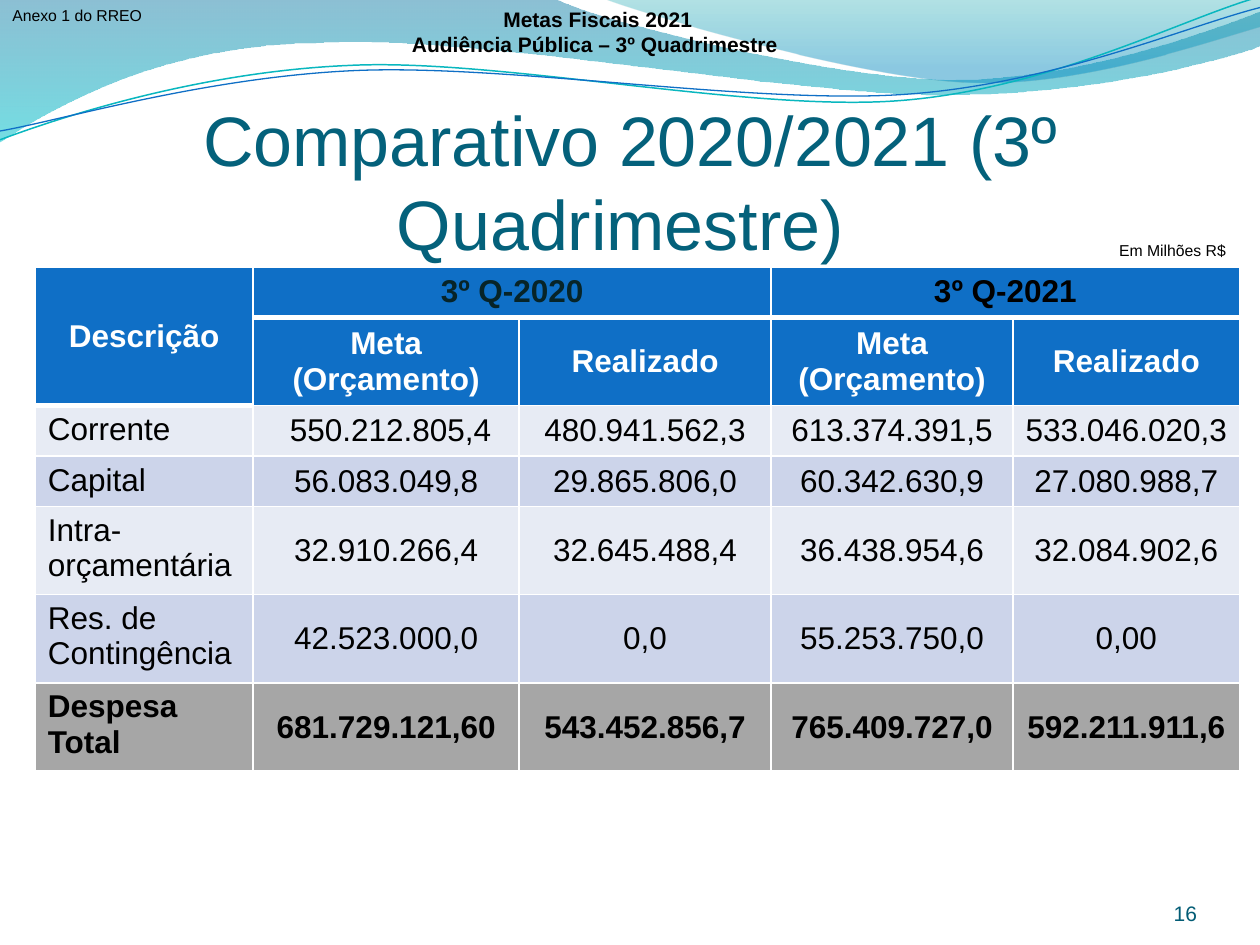
from lxml.etree import SubElement
from pptx import Presentation
from pptx.dml.color import RGBColor as RGB
from pptx.enum.text import MSO_ANCHOR as Anchor, MSO_AUTO_SIZE as Fit, PP_ALIGN as Align
from pptx.oxml import parse_xml
from pptx.oxml.ns import nsdecls, qn
from pptx.util import Inches, Pt

BLACK, WHITE = RGB(0, 0, 0), RGB(255, 255, 255)
BLUE, DARK = RGB(0x0F, 0x6F, 0xC6), RGB(0x07, 0x24, 0x28)
TEAL, NAVY = RGB(0x04, 0x61, 0x7B), RGB(0x03, 0x5C, 0x75)
AQUA = RGB(0x09, 0xB7, 0xBF)
PALE, MIST, GREY = RGB(0xE7, 0xEB, 0xF4), RGB(0xCC, 0xD4, 0xEA), RGB(0xA6, 0xA6, 0xA6)

# Waves: a number pair is a straight step, six numbers are a curve
BANDS = [
    ([(0, 0), (4.4, -0.01), (4.76, 0.17, 6.64, 0.63, 7.58, 0.63),
      (8.53, 0.63, 9.58, 0.26, 10, 0.09), (10.01, 0.36),
      (9.83, 0.44, 8.7, 0.76, 7.46, 0.75), (6.22, 0.75, 3.82, 0.28, 2.57, 0.34),
      (1.29, 0.35, 0.46, 0.83, -0.01, 1.13), (0, 0)],
     270, [(0, RGB(0, 0x74, 0xA0), 45), (1, RGB(0, 0xC4, 0xCD), 55)]),
    ([(4.79, -0.01), (5.09, 0.11, 6.82, 0.62, 7.69, 0.65),
      (8.56, 0.69, 9.61, 0.32, 10, 0.21), (10, 0), (4.79, -0.01)],
     90, [(0.2, RGB(0, 0x8A, 0xBF), 45), (1, RGB(0, 0xA0, 0xA8), 30)]),
]
LINES = [
    ([(0, 1.11), (0.48, 0.93, 1.58, 0.57, 2.77, 0.52),
      (3.95, 0.46, 5.93, 0.89, 7.13, 0.8), (8.33, 0.71, 9.38, 0.15, 9.98, -0.02)],
     AQUA, 0.85),
    ([(0, 1.04), (0.47, 0.96, 1.64, 0.61, 2.83, 0.56),
      (4.03, 0.51, 5.97, 0.83, 7.17, 0.75), (8.36, 0.67, 9.41, 0.21, 10, 0.06)],
     BLUE, 0.75),
]

COLS = [1.73, 2.11, 2, 1.92, 1.8]
LOW, TALL = 0.4, 0.7
ROWS = [LOW, TALL, LOW, LOW, TALL, TALL, TALL]
FILLS = [BLUE, BLUE, PALE, MIST, PALE, MIST, GREY]
DATA = [
    ["Descrição", "3º Q-2020", "", "3º Q-2021", ""],
    ["", *["Meta (Orçamento)", "Realizado"] * 2],
    ["Corrente", " 550.212.805,4", "480.941.562,3", "613.374.391,5", "533.046.020,3"],
    ["Capital", "56.083.049,8", "29.865.806,0", "60.342.630,9", "27.080.988,7"],
    ["Intra-orçamentária", "32.910.266,4", "32.645.488,4", "36.438.954,6", "32.084.902,6"],
    ["Res. de Contingência", "42.523.000,0", "0,0", "55.253.750,0", "0,00"],
    ["Despesa Total", "681.729.121,60", "543.452.856,7", "765.409.727,0", "592.211.911,6"],
]


def apply(item, **form):
    for name, value in form.items():
        setattr(item, name, value)


def write(frame, text, size, color, align, bold=False):
    frame.text = text
    for para in frame.paragraphs:
        para.alignment = align
        apply(para.font, name="Arial", size=Pt(size), bold=bold)
        para.font.color.rgb = color


def add_wave(slide, box, steps, close):
    left, top = box[:2]
    ends = [(Inches(left + step[-2]), Inches(top + step[-1])) for step in steps]
    pen = slide.shapes.build_freeform(*ends[0], scale=1.0)
    pen.add_line_segments(ends[1:], close=close)
    wave = pen.convert_to_shape()
    wave.shadow.inherit = False
    # Bend the curved steps: two control points go before the end point
    parts = list(wave._element.spPr.iter(qn("a:lnTo")))
    for part, step in zip(parts, steps[1:]):
        if len(step) == 6:
            part.tag = qn("a:cubicBezTo")
            for i in (0, 1):
                x = Inches(left + step[2 * i]) - wave.left
                y = Inches(top + step[2 * i + 1]) - wave.top
                part.insert(i, parse_xml(f'<a:pt {nsdecls("a")} x="{x}" y="{y}"/>'))
    return wave


def add_waves(slide, box):
    # Shaded bands
    for steps, angle, stops in BANDS:
        band = add_wave(slide, box, steps, True)
        band.line.fill.background()
        band.fill.gradient()
        band.fill.gradient_angle = angle
        for stop, (pos, color, _) in zip(band.fill.gradient_stops, stops):
            stop.position = pos
            stop.color.rgb = color
        tints = band._element.spPr.iter(qn("a:srgbClr"))
        for tint, (_, _, alpha) in zip(list(tints), stops):
            SubElement(tint, qn("a:alpha"), val=str(alpha * 1000))
    # Thin lines
    for steps, color, width in LINES:
        wave = add_wave(slide, box, steps, False)
        wave.fill.background()
        wave.line.color.rgb = color
        wave.line.width = Pt(width)


def place(shape, box):
    sides = ("left", "top", "width", "height")
    apply(shape, **{side: Inches(n) for side, n in zip(sides, box)})


def add_title(slide, box):
    title = slide.shapes.title
    slide.shapes._spTree.append(title._element)
    place(title, box)
    frame = title.text_frame
    write(frame, "Comparativo 2020/2021 (3º Quadrimestre) ", 40, TEAL, Align.CENTER)
    apply(frame, auto_size=Fit.NONE, word_wrap=True, vertical_anchor=Anchor.BOTTOM,
          margin_left=0, margin_right=0, margin_top=Inches(0.05), margin_bottom=0)


def add_label(slide, box, text, size, color, align, bold=False, **form):
    frame = slide.shapes.add_textbox(*map(Inches, box)).text_frame
    apply(frame, **{"word_wrap": True, **form})
    write(frame, text, size, color, align, bold)


def add_border(cell, sides):
    props = cell._tc.get_or_add_tcPr()
    for i, (side, width) in enumerate(sides.items()):
        props.insert(i, parse_xml(
            f'<a:ln{side} {nsdecls("a")} w="{Pt(width)}"><a:solidFill>'
            f'<a:srgbClr val="{WHITE}"/></a:solidFill></a:ln{side}>'))


def add_grid(slide, box):
    grid = slide.shapes.add_table(len(ROWS), len(COLS), *map(Inches, box)).table
    apply(grid, first_row=False, horz_banding=False)
    for col, width in zip(grid.columns, COLS):
        col.width = Inches(width)
    for row, height in zip(grid.rows, ROWS):
        row.height = Inches(height)
    # Joined heading cells
    for start, end in [((0, 0), (1, 0)), ((0, 1), (0, 2)), ((0, 3), (0, 4))]:
        grid.cell(*start).merge(grid.cell(*end))
    last = len(ROWS) - 1
    for r, line in enumerate(DATA):
        for c, text in enumerate(line):
            cell = grid.cell(r, c)
            cell.fill.solid()
            cell.fill.fore_color.rgb = FILLS[r]
            # A thick rule closes the first heading cell of each column
            thick = 1 if c else 2
            add_border(cell, {"L": 0.96, "R": 0.96, "T": 3 if r == thick else 0.96,
                              "B": 3 if r + cell.span_height == thick else 0.96})
            if not text:
                continue
            color = WHITE if r < 2 else BLACK
            if r == 0 and c:
                color = DARK if c == 1 else BLACK
            align = Align.LEFT if r > 1 and c == 0 else Align.CENTER
            write(cell.text_frame, text, 18, color, align, r < 2 or r == last)
            top = (r > 1 and c == 0) or (r == 0 and c > 0)
            cell.vertical_anchor = Anchor.TOP if top else Anchor.MIDDLE
            if r == last and c:
                apply(cell, margin_left=Inches(0.01), margin_right=Inches(0.01),
                      margin_top=Inches(0.01), margin_bottom=0)


def main():
    deck = Presentation()
    apply(deck, slide_width=Inches(10), slide_height=Inches(7.5))
    slide = deck.slides.add_slide(deck.slide_layouts[5])
    add_waves(slide, (0, 0))
    add_title(slide, (0.5, 0.85, 9, 1.25))
    add_grid(slide, (0.28, 2.12, 9.55, 4))
    # Page number and notes
    add_label(slide, (8.67, 6.95, 0.83, 0.4), "16", 12, NAVY, Align.RIGHT,
              vertical_anchor=Anchor.BOTTOM, margin_left=0, margin_right=0,
              margin_top=0, margin_bottom=0)
    add_label(slide, (8.78, 1.86, 1.05, 0.25), "Em Milhões R$", 9, BLACK,
              Align.CENTER, word_wrap=False)
    add_label(slide, (0, 0, 1.36, 0.25), "Anexo 1 do RREO", 9, BLACK, Align.LEFT)
    add_label(slide, (3.05, 0, 3.39, 0.5),
              "Metas Fiscais 2021\nAudiência Pública – 3º Quadrimestre ", 12, BLACK,
              Align.CENTER, True, vertical_anchor=Anchor.MIDDLE)
    deck.save("out.pptx")


if __name__ == "__main__":
    main()
